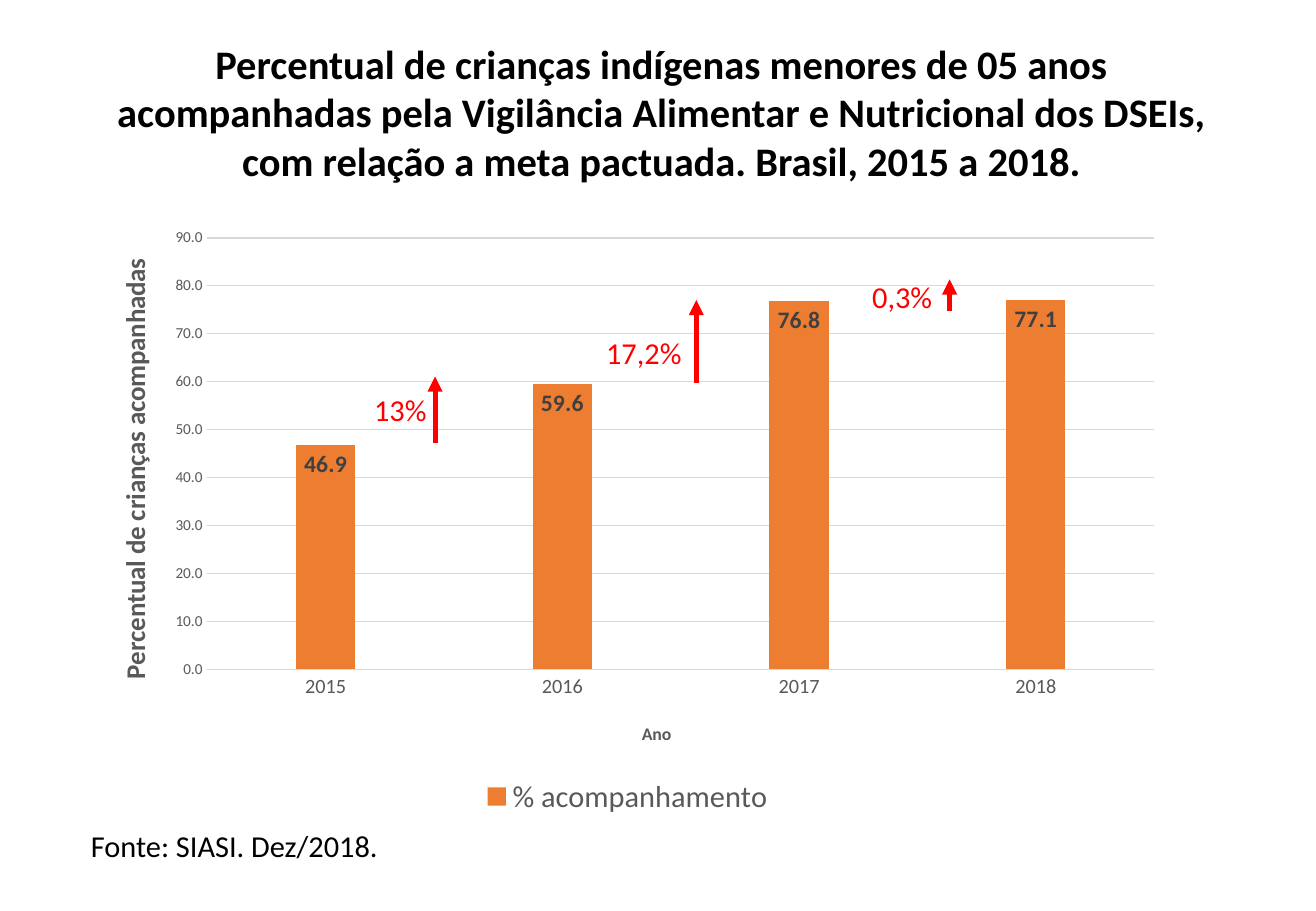
import pptx
import pptx.chart.data
import pptx.dml.color
import pptx.enum.chart
import pptx.enum.shapes
import pptx.enum.text
import pptx.oxml
import pptx.oxml.ns
import pptx.util

COLORS = {"text": "000000", "growth": "FF0000", "bar": "ED7D31",
          "axis": "595959", "label": "404040", "grid": "D9D9D9"}
RGB = {name: pptx.dml.color.RGBColor.from_string(code) for name, code in COLORS.items()}
FONT = "Calibri"
qn = pptx.oxml.ns.qn

deck = pptx.Presentation()
deck.slide_width = pptx.util.Inches(10.83)
deck.slide_height = pptx.util.Inches(7.5)
slide = deck.slides.add_slide(deck.slide_layouts[6])

# Grid of 100 columns by 100 rows
COL = deck.slide_width / 100
ROW = deck.slide_height / 100


def style(font, size, color, bold=False):
    font.name = FONT
    font.size = pptx.util.Pt(size)
    font.bold = bold
    font.color.rgb = RGB[color]


def set_layout(parent, **shares):
    """Place a chart part by shares of the chart's size."""
    for old in parent.findall(qn("c:layout")):
        parent.remove(old)
    layout = parent.makeelement(qn("c:layout"), {})
    manual = pptx.oxml.ns
    manual = layout.makeelement(qn("c:manualLayout"), {})
    layout.append(manual)
    settings = {"xMode": "edge", "yMode": "edge", **shares}
    if "w" in shares:
        settings = {"layoutTarget": "inner", **settings}
    for tag, value in settings.items():
        manual.append(manual.makeelement(qn("c:" + tag), {"val": str(value)}))
    text = parent.find(qn("c:tx"))
    parent.insert(0 if text is None else 1, layout)


# Chart
data = pptx.chart.data.CategoryChartData(number_format="0.0")
data.categories = ["2015", "2016", "2017", "2018"]
data.add_series("% acompanhamento", [46.9, 59.6, 76.8, 77.1])
chart = slide.shapes.add_chart(
    pptx.enum.chart.XL_CHART_TYPE.COLUMN_CLUSTERED,
    int(6 * COL), int(23.87 * ROW), int(83.38 * COL), int(66.27 * ROW), data).chart
style(chart.font, 10, "text")
chart.has_title = False
chart.has_legend = True
chart.legend.position = pptx.enum.chart.XL_LEGEND_POSITION.BOTTOM
chart.legend.include_in_layout = False
style(chart.legend.font, 18, "axis")

plot = chart.plots[0]
plot.vary_by_categories = False
plot.gap_width = 300
monitored = plot.series[0]
monitored.format.fill.solid()
monitored.format.fill.fore_color.rgb = RGB["bar"]
labels = monitored.data_labels
labels.show_value = True
labels.number_format = "0.0"
labels.number_format_is_linked = False
labels.position = pptx.enum.chart.XL_LABEL_POSITION.INSIDE_END
style(labels.font, 14, "label", bold=True)

years, percent = chart.category_axis, chart.value_axis
for axis, title, title_size, tick_size, x, y in [
        (years, "Ano", 10.5, 12, 0.51, 0.83),
        (percent, "Percentual de crianças acompanhadas", 16, 9, 0.03, 0.06)]:
    style(axis.tick_labels.font, tick_size, "axis")
    axis.major_tick_mark = pptx.enum.chart.XL_TICK_MARK.NONE
    run = axis.axis_title.text_frame.paragraphs[0].add_run()
    run.text = title
    style(run.font, title_size, "axis", bold=True)
    set_layout(axis.axis_title._element, x=x, y=y)

percent.minimum_scale, percent.maximum_scale, percent.major_unit = 0, 90, 10
percent.tick_labels.number_format = "0.0"
percent.tick_labels.number_format_is_linked = False
percent.format.line.fill.background()
for line in (years.format.line, percent.major_gridlines.format.line):
    line.color.rgb = RGB["grid"]
    line.width = pptx.util.Pt(0.75)
set_layout(chart._chartSpace.chart.plotArea, x=0.117, y=0.034, w=0.863, h=0.715)

# Title, source and growth figures
GROWTH = [  # text, left, top, width, arrow column, arrow foot, arrow head
    ("13%", 27.52, 42.27, 8.5, 33.06, 48.67, 41.33),
    ("17,2%", 45.15, 36, 10.25, 52.91, 42, 32.93),
    ("0,3%", 65.37, 29.87, 8.5, 72.16, 34.13, 30.67),
]
TITLE = ("Percentual de crianças indígenas menores de 05 anos acompanhadas pela "
         "Vigilância Alimentar e Nutricional dos DSEIs, com relação a meta pactuada. "
         "Brasil, 2015 a 2018.")
LEFT, CENTER = pptx.enum.text.PP_ALIGN.LEFT, pptx.enum.text.PP_ALIGN.CENTER
texts = [(TITLE, 7.29, 3.6, 85.96, 17.47, 24, "text", True, CENTER),
         ("Fonte: SIASI. Dez/2018.", 6, 90.13, 23.9, 5.33, 18, "text", False, LEFT)]
texts += [(text, left, top, width, 5.33, 18, "growth", False, LEFT)
          for text, left, top, width, *_ in GROWTH]
for text, left, top, width, height, size, color, bold, align in texts:
    frame = slide.shapes.add_textbox(int(left * COL), int(top * ROW),
                                     int(width * COL), int(height * ROW)).text_frame
    frame.word_wrap = True
    paragraph = frame.paragraphs[0]
    paragraph.alignment = align
    run = paragraph.add_run()
    run.text = text
    style(run.font, size, color, bold)

# Growth arrows
for *_, column, foot, head in GROWTH:
    arrow = slide.shapes.add_connector(
        pptx.enum.shapes.MSO_CONNECTOR.STRAIGHT,
        int(column * COL), int(foot * ROW), int(column * COL), int(head * ROW))
    arrow.line.color.rgb = RGB["growth"]
    arrow.line.width = pptx.util.Pt(3)
    outline = arrow.line._get_or_add_ln()
    outline.append(outline.makeelement(qn("a:tailEnd"), {"type": "triangle"}))
    properties = arrow._element.spPr
    properties.append(properties.makeelement(qn("a:effectLst"), {}))

deck.save("out.pptx")
